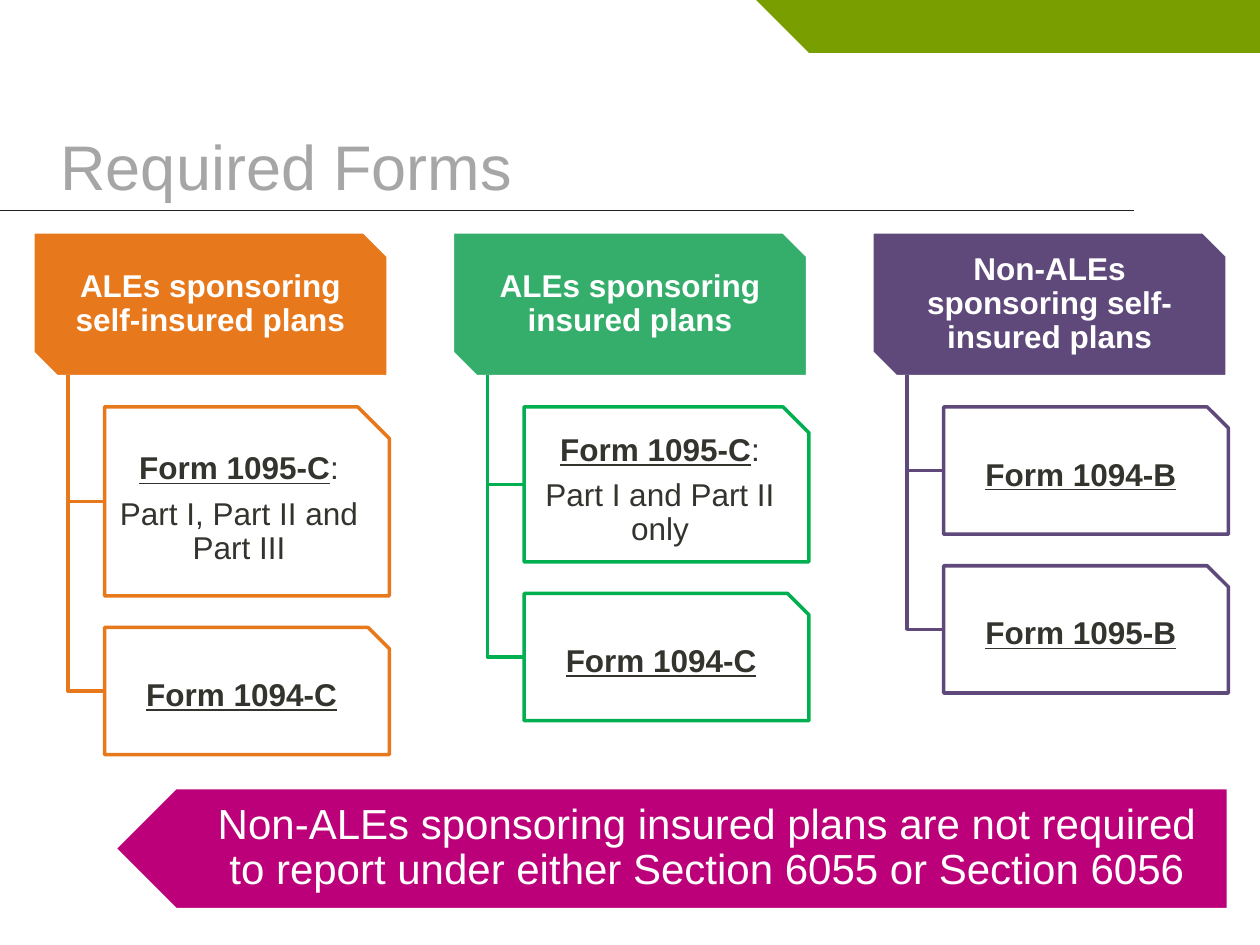
from lxml import etree
from pptx import Presentation
from pptx.dml.color import RGBColor
from pptx.enum import shapes, text
from pptx.oxml.ns import qn
from pptx.util import Inches, Pt

COLORS = {
    "white": "FFFFFF", "ink": "33342E", "rule": "21221E", "title": "A6A6A6",
    "banner": "789E00", "orange": "E8781C", "green": "35AE6C",
    "bright green": "00B050", "purple": "5F497A", "magenta": "BC0079",
}
FONT = "Arial"
SHAPE = shapes.MSO_SHAPE
CENTER = text.PP_ALIGN.CENTER
MIDDLE = text.MSO_ANCHOR.MIDDLE

# A form is a height and paragraphs; a paragraph is a list of (words, is form name).
COLUMNS = [
    ("ALEs sponsoring self-insured plans", "orange", "orange", [
        (1.5, [[("Form 1095-C", True), (":", False)],
               [("Part I, Part II and Part III", False)]]),
        (1.01, [[("Form 1094-C", True)]]),
    ]),
    ("ALEs sponsoring insured plans", "green", "bright green", [
        (1.23, [[("Form 1095-C", True), (":", False)],
                [("Part I and Part II only", False)]]),
        (1.01, [[("Form 1094-C", True)]]),
    ]),
    ("Non-ALEs sponsoring self-insured plans", "purple", "purple", [
        (1.01, [[("Form 1094-B", True)]]),
        (1.01, [[("Form 1095-B", True)]]),
    ]),
]
COLUMN_LEFT, COLUMN_PITCH = 0.26, 3.33
HEADER_TOP, HEADER_WIDTH, HEADER_HEIGHT = 1.84, 2.82, 1.15
TRUNK_INDENT, FORM_INDENT, FORM_WIDTH = 0.28, 0.57, 2.26
TRUNK_TOP, FORM_GAP = 2.98, 0.25


def rgb(name):
    return RGBColor.from_string(COLORS[name])


def write(frame, paragraphs, size=18, color="ink", bold=False, align=CENTER,
          anchor=MIDDLE, insets=(0.04, 0.03, 0.04, 0.03), spacing=0.9, after=0.35):
    """Fill a frame; form names are bold and underlined, space after is a share of size."""
    frame.word_wrap = True
    frame.auto_size = text.MSO_AUTO_SIZE.NONE
    frame.vertical_anchor = anchor
    (frame.margin_left, frame.margin_top,
     frame.margin_right, frame.margin_bottom) = map(Inches, insets)
    for index, runs in enumerate(paragraphs):
        paragraph = frame.add_paragraph() if index else frame.paragraphs[0]
        paragraph.alignment = align
        paragraph.line_spacing = spacing
        paragraph.space_after = Pt(size * after)
        for words, is_form_name in runs:
            run = paragraph.add_run()
            run.text = words
            run.font.name = FONT
            run.font.size = Pt(size)
            run.font.color.rgb = rgb(color)
            run.font.bold = bold or is_form_name
            run.font.underline = is_form_name


def add_block(slide, kind, box, fill, line=None, rotation=0):
    block = slide.shapes.add_shape(kind, *map(Inches, box))
    block.shadow.inherit = False
    block.rotation = rotation
    block.fill.solid()
    block.fill.fore_color.rgb = rgb(fill)
    if line:
        block.line.color.rgb = rgb(line)
        block.line.width = Pt(2)
    else:
        block.line.fill.background()
    return block


def add_elbow(slide, left, top, right, bottom, color):
    """Draw a branch down from the header and across to a form."""
    builder = slide.shapes.build_freeform(Inches(left), Inches(top))
    builder.add_line_segments(
        [(Inches(left), Inches(bottom)), (Inches(right), Inches(bottom))], close=False)
    elbow = builder.convert_to_shape()
    elbow.shadow.inherit = False
    elbow.fill.background()
    elbow.line.color.rgb = rgb(color)
    elbow.line.width = Pt(2)


def add_rule(slide, left, right, y):
    rule = slide.shapes.add_connector(
        shapes.MSO_CONNECTOR.STRAIGHT, *map(Inches, (left, y, right, y)))
    rule.line.color.rgb = rgb("rule")
    rule.line.width = Pt(0.25)
    etree.SubElement(rule.line._get_or_add_ln().getparent(), qn("a:effectLst"))


def add_title(slide, words):
    title = slide.shapes.title
    title.left, title.top, title.width, title.height = map(Inches, (0, 0.45, 9.5, 1.21))
    write(title.text_frame, [[(words, False)]], size=36, color="title",
          align=text.PP_ALIGN.LEFT, anchor=text.MSO_ANCHOR.BOTTOM,
          insets=(0.48, 0.05, 0.1, 0.05), spacing=1, after=0)


def add_column(slide, left, heading, fill, outline, forms):
    header = add_block(slide, SHAPE.SNIP_2_DIAG_RECTANGLE,
                       (left, HEADER_TOP, HEADER_WIDTH, HEADER_HEIGHT), fill, "white")
    write(header.text_frame, [[(heading, False)]], color="white", bold=True)
    trunk, form_left = left + TRUNK_INDENT, left + FORM_INDENT
    top = TRUNK_TOP + FORM_GAP
    for height, paragraphs in forms:
        add_elbow(slide, trunk, TRUNK_TOP, form_left, top + height / 2, outline)
        form = add_block(slide, SHAPE.SNIP_1_RECTANGLE,
                         (form_left, top, FORM_WIDTH, height), "white", outline)
        write(form.text_frame, paragraphs)
        top += height + FORM_GAP


def add_note(slide, words):
    # The arrow is turned round, so its words sit in an upright box above it.
    add_block(slide, SHAPE.PENTAGON, (0.91, 6.25, 8.84, 0.97), "magenta", "white", 180)
    note = slide.shapes.add_textbox(*map(Inches, (1.16, 6.25, 8.59, 0.97)))
    write(note.text_frame, [[(words, False)]], size=24, color="white",
          insets=(0.5, 0.1, 0.19, 0.1))


def main():
    deck = Presentation()
    deck.slide_width, deck.slide_height = Inches(10), Inches(7.5)
    slide = deck.slides.add_slide(deck.slide_layouts[5])
    add_rule(slide, 0, 9, 1.67)
    add_block(slide, SHAPE.RECTANGLE, (6.42, 0, 3.58, 0.42), "banner")
    add_block(slide, SHAPE.RIGHT_TRIANGLE, (6, 0, 0.42, 0.42), "banner", rotation=180)
    add_title(slide, "Required Forms")
    for index, column in enumerate(COLUMNS):
        add_column(slide, COLUMN_LEFT + index * COLUMN_PITCH, *column)
    add_note(slide, "Non-ALEs sponsoring insured plans are not required to report "
                    "under either Section 6055 or Section 6056")
    deck.save("out.pptx")


if __name__ == "__main__":
    main()
